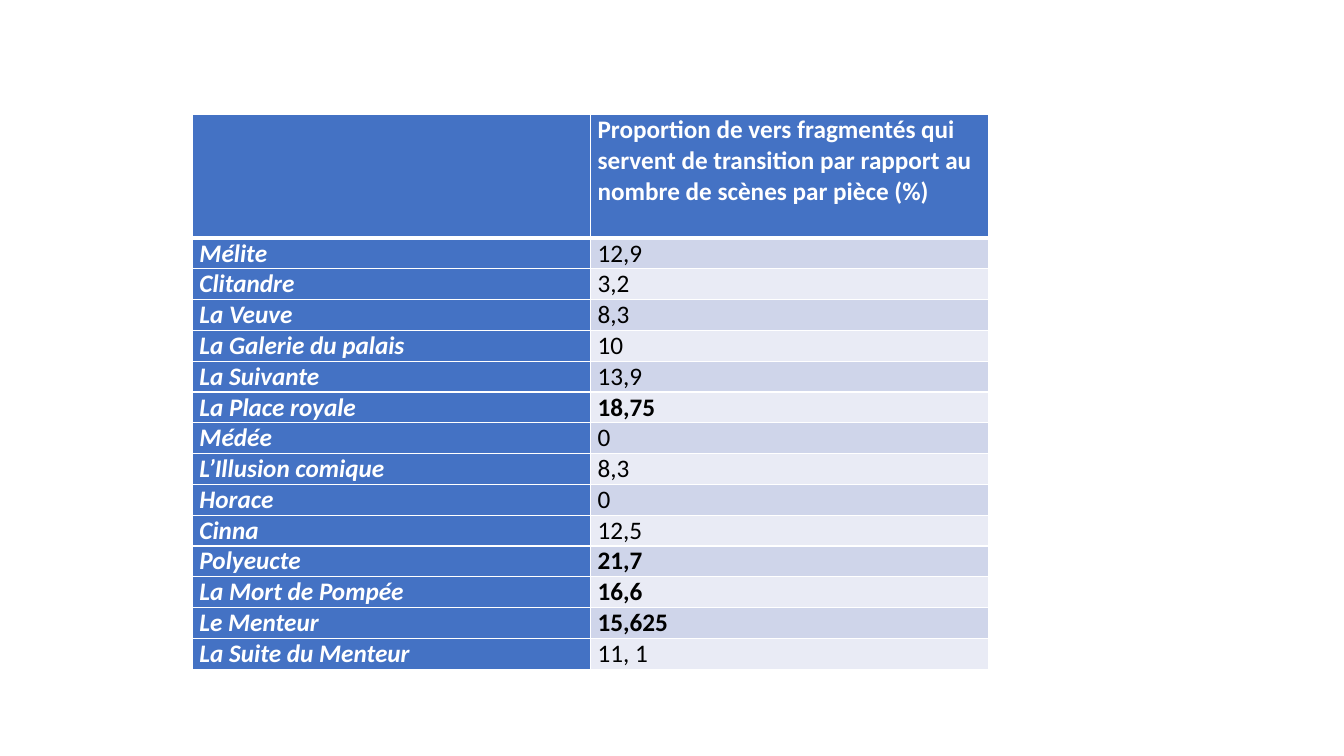
from pptx import Presentation
from pptx.dml.color import RGBColor
from pptx.enum.text import MSO_VERTICAL_ANCHOR as Anchor
from pptx.oxml import parse_xml
from pptx.oxml.ns import nsdecls
from pptx.util import Pt

WHITE, BLACK, BLUE = "FFFFFF", "000000", "4472C4"
BANDS = ("CFD5EA", "E9EBF5")
HEADER = "Proportion de vers fragmentés qui servent de transition par rapport au nombre de scènes par pièce (%)"
PLAYS = [
    ("Mélite", "12,9"),
    ("Clitandre", "3,2"),
    ("La Veuve", "8,3"),
    ("La Galerie du palais", "10"),
    ("La Suivante", "13,9"),
    ("La Place royale", "18,75"),
    ("Médée", "0"),
    ("L’Illusion comique", "8,3"),
    ("Horace", "0"),
    ("Cinna", "12,5"),
    ("Polyeucte", "21,7"),
    ("La Mort de Pompée", "16,6"),
    ("Le Menteur", "15,625"),
    ("La Suite du Menteur", "11, 1"),
]
HIGHEST = {"La Place royale", "Polyeucte", "La Mort de Pompée", "Le Menteur"}


def color(value):
    return RGBColor.from_string(value)


class SlideBuilder:
    """Holds the text style and the current slide, and adds elements to it."""

    def __init__(self, slide, font="Calibri", size=18):
        self.slide, self.font, self.size = slide, font, size

    def table(self, left, top, column_widths, row_heights):
        frame = self.slide.shapes.add_table(
            len(row_heights), len(column_widths), Pt(left), Pt(top),
            Pt(sum(column_widths)), Pt(sum(row_heights)))
        table = frame.table
        table.first_col = True
        for column, width in zip(table.columns, column_widths):
            column.width = Pt(width)
        for row, height in zip(table.rows, row_heights):
            row.height = Pt(height)
        return table

    def cell(self, cell, text, fill, text_color=WHITE, bold=True, italic=False,
             anchor=Anchor.MIDDLE, top_line=1, bottom_line=1):
        cell.fill.solid()
        cell.fill.fore_color.rgb = color(fill)
        cell.vertical_anchor = anchor
        cell.margin_left = cell.margin_right = Pt(5)
        cell.margin_top = cell.margin_bottom = Pt(0)
        self.borders(cell, L=1, R=1, T=top_line, B=bottom_line)
        cell.text_frame.text = text
        for run in cell.text_frame.paragraphs[0].runs:
            run.font.name, run.font.size = self.font, Pt(self.size)
            run.font.bold, run.font.italic = bold, italic
            run.font.color.rgb = color(text_color)

    def borders(self, cell, **widths):
        properties = cell._tc.get_or_add_tcPr()
        for index, (side, width) in enumerate(widths.items()):
            properties.insert(index, parse_xml(
                f'<a:ln{side} {nsdecls("a")} w="{Pt(width)}"><a:solidFill>'
                f'<a:srgbClr val="{WHITE}"/></a:solidFill></a:ln{side}>'))


def main():
    presentation = Presentation()
    presentation.slide_width, presentation.slide_height = Pt(960), Pt(540)
    slide = presentation.slides.add_slide(presentation.slide_layouts[6])
    builder = SlideBuilder(slide)
    table = builder.table(137.5, 82, [284.4] * 2, [88] + [22] * len(PLAYS))
    for column, text in enumerate(("", HEADER)):
        builder.cell(table.cell(0, column), text, BLUE, anchor=Anchor.TOP, bottom_line=3)
    for row, (play, share) in enumerate(PLAYS, start=1):
        top_line = 3 if row == 1 else 1
        builder.cell(table.cell(row, 0), play, BLUE, italic=True, top_line=top_line)
        builder.cell(table.cell(row, 1), share, BANDS[(row - 1) % 2], BLACK,
                     bold=play in HIGHEST, top_line=top_line)
    presentation.save("out.pptx")


if __name__ == "__main__":
    main()
